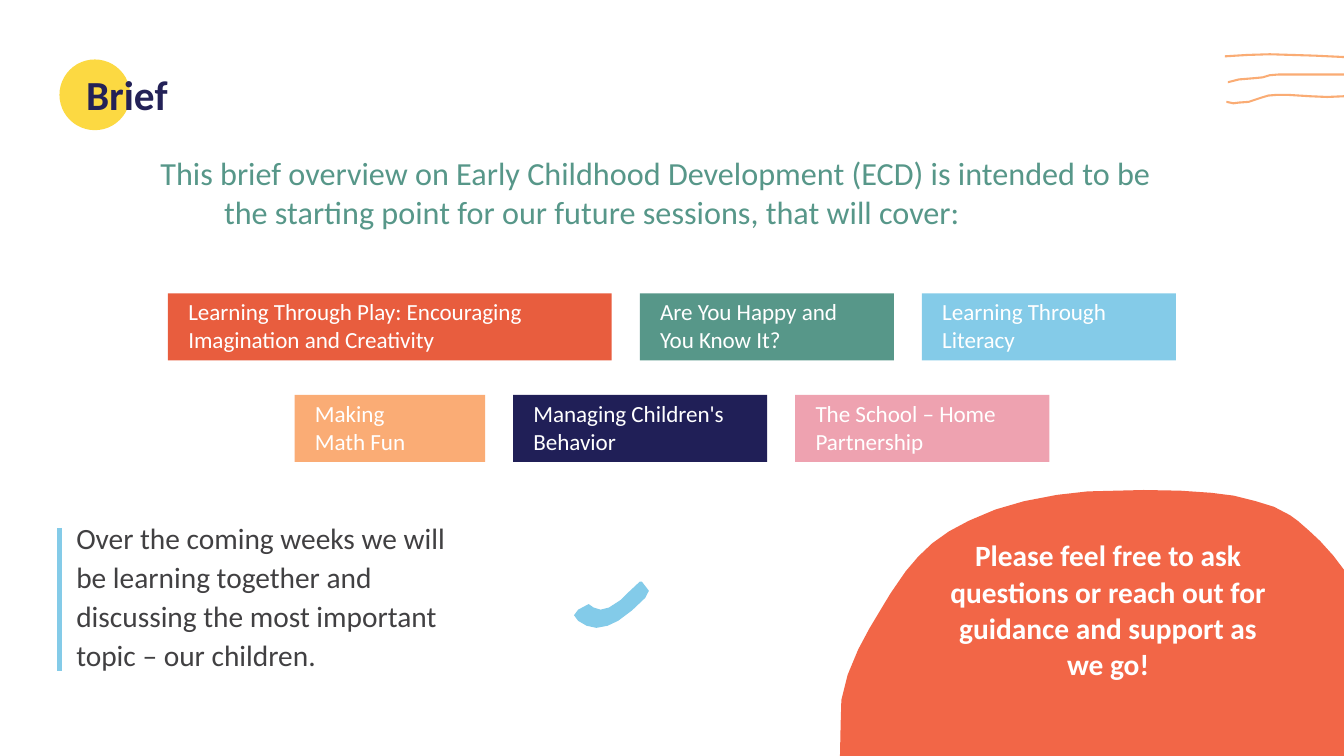
"""Build the brief overview slide on Early Childhood Development."""
from pptx import Presentation
from pptx.dml.color import RGBColor
from pptx.enum.shapes import MSO_CONNECTOR, MSO_SHAPE
from pptx.enum.text import MSO_ANCHOR as ANCHOR, PP_ALIGN as ALIGN
from pptx.oxml.ns import qn
from pptx.util import Pt
from lxml import etree

WHITE = RGBColor(0xFF, 0xFF, 0xFF)
CORAL = RGBColor(0xF2, 0x66, 0x47)
RED = RGBColor(0xE8, 0x5D, 0x3E)
GREEN = RGBColor(0x57, 0x97, 0x89)
BLUE = RGBColor(0x84, 0xCB, 0xE8)
TICK_BLUE = RGBColor(0x83, 0xCB, 0xE9)
YELLOW = RGBColor(0xFC, 0xD9, 0x42)
ORANGE = RGBColor(0xFA, 0xAC, 0x75)
WAVE_ORANGE = RGBColor(0xFA, 0xAC, 0x74)
NAVY = RGBColor(0x20, 0x1F, 0x57)
TITLE_NAVY = RGBColor(0x23, 0x21, 0x57)
PINK = RGBColor(0xEE, 0xA2, 0xB0)
GREY = RGBColor(0x41, 0x40, 0x42)

SLIDE_W, SLIDE_H = 960, 540


def write(sp, text, size, color, top=0, right=0, indent=0, hang=0,
          spacing=1.0, bold=False, align=ALIGN.LEFT):
    tf = sp.text_frame
    tf.word_wrap = True
    tf.vertical_anchor = ANCHOR.TOP
    tf.margin_left = tf.margin_bottom = 0
    tf.margin_top, tf.margin_right = Pt(top), Pt(right)
    p = tf.paragraphs[0]
    p.alignment, p.line_spacing = align, spacing
    pPr = p._p.get_or_add_pPr()
    pPr.set("marL", str(Pt(indent)))
    pPr.set("indent", str(Pt(hang)))
    r = p.add_run()
    r.text = text
    r.font.name, r.font.size, r.font.bold = "Calibri", Pt(size), bold
    r.font.color.rgb = color


def outline(points, color):
    points = [(Pt(x), Pt(y)) for x, y in points]
    builder = s.shapes.build_freeform(*points[0])
    builder.add_line_segments(points[1:], close=True)
    sp = builder.convert_to_shape()
    sp.shadow.inherit = False
    sp.fill.solid()
    sp.fill.fore_color.rgb = color
    sp.line.fill.background()


prs = Presentation()
prs.slide_width, prs.slide_height = Pt(SLIDE_W), Pt(SLIDE_H)
s = prs.slides.add_slide(prs.slide_layouts[5])

blob = [
    (817, 350), (777, 351), (755, 353.5), (731.5, 358), (711, 364), (692, 372),
    (678, 379.5), (666, 388), (656, 397.5), (647, 408), (636, 424), (621, 449),
    (613, 464), (605.5, 482), (601, 500), (600.5, 517), (600, SLIDE_H),
    (SLIDE_W, SLIDE_H), (SLIDE_W, 407), (952.5, 397), (943, 386.5), (935, 379),
    (927, 372), (921.5, 368), (910, 362), (897, 358), (881, 354), (865, 352),
    (843, 350.5)]
outline(blob, CORAL)

tick = [
    (457, 415.5), (449, 423), (443.5, 428.5), (435, 434), (429, 435.5),
    (424, 434), (420.5, 431.5), (413, 435.5), (410, 439.5), (413, 443.5),
    (419, 447), (426, 448.5), (434, 447), (441.5, 443.5), (451.5, 436),
    (461, 427), (463.5, 422), (458.5, 415.5)]
outline(tick, TICK_BLUE)

waves = [
    [(875, 39.5), (891, 38.5), (907, 38), (923, 38.5), (939, 39), (960, 40)],
    [(877, 58), (885, 56), (897, 55), (902, 54.5), (907, 53), (913, 52.5),
     (960, 52.5)],
    [(876, 72), (881, 73), (885, 72.5), (892, 72), (901, 69), (906, 67.5),
     (912, 67), (920, 67), (936, 68), (948, 68.5), (960, 68)]]
for wave in waves:
    outline(wave + [(x, y + 1.5) for x, y in reversed(wave)], WAVE_ORANGE)

bar = s.shapes.add_connector(MSO_CONNECTOR.STRAIGHT, Pt(42.5), Pt(377),
                             Pt(42.5), Pt(479))
bar.line.color.rgb, bar.line.width = BLUE, Pt(3)
etree.SubElement(bar._element.spPr, qn("a:effectLst"))

dot = s.shapes.add_shape(MSO_SHAPE.OVAL, Pt(42.5), Pt(42.5), Pt(50.5), Pt(50.5))
dot.shadow.inherit = False
dot.fill.solid()
dot.fill.fore_color.rgb = YELLOW
dot.line.fill.background()

title = s.shapes.title
title.left, title.top, title.width, title.height = Pt(60.5), Pt(47.5), Pt(68.5), Pt(37.5)
write(title, "Brief", 29.5, TITLE_NAVY, top=1.6, indent=1, bold=True)
s.shapes._spTree.append(title._element)

texts = [
    ((114, 108, 733, 57.5),
     "This brief overview on Early Childhood Development (ECD) is intended to be "
     "the starting point for our future sessions, that will cover:",
     dict(size=23, color=GREEN, top=1.3, right=14, indent=46, hang=-45.5,
          spacing=1.01)),
    ((53.5, 367, 286.5, 114),
     "Over the coming weeks we will be learning together and discussing the most "
     "important topic – our children.",
     dict(size=21, color=GREY, top=1.7, right=14, indent=1, spacing=1.11)),
    ((676, 383, 230, 105),
     "Please feel free to ask questions or reach out for guidance and support as "
     "we go!",
     dict(size=21, color=WHITE, top=0.2, indent=1, spacing=1.03, bold=True,
          align=ALIGN.CENTER))]
for box, text, style in texts:
    write(s.shapes.add_textbox(*map(Pt, box)), text, **style)

CARD_H, GAP = 48, 20
card_rows = [
    (209.5, [("Learning Through Play: Encouraging Imagination and Creativity", 317, RED, 20),
             ("Are You Happy and You Know It?", 181.5, GREEN, 20),
             ("Learning Through Literacy", 181.5, BLUE, 20)]),
    (282, [("Making Math Fun", 136, ORANGE, 43),
           ("Managing Children's Behavior", 181.5, NAVY, 20),
           ("The School – Home Partnership", 181.5, PINK, 20)])]
for top, cards in card_rows:
    row_w = sum(card[1] for card in cards) + GAP * (len(cards) - 1)
    left = (SLIDE_W - row_w) / 2
    for topic, width, color, right in cards:
        sp = s.shapes.add_shape(MSO_SHAPE.RECTANGLE, Pt(left), Pt(top),
                                Pt(width), Pt(CARD_H))
        sp.shadow.inherit = False
        sp.fill.solid()
        sp.fill.fore_color.rgb = color
        sp.line.fill.background()
        write(sp, topic, 16.5, WHITE, top=3, right=right, indent=14.5, spacing=1.01)
        left += width + GAP

prs.save("out.pptx")
